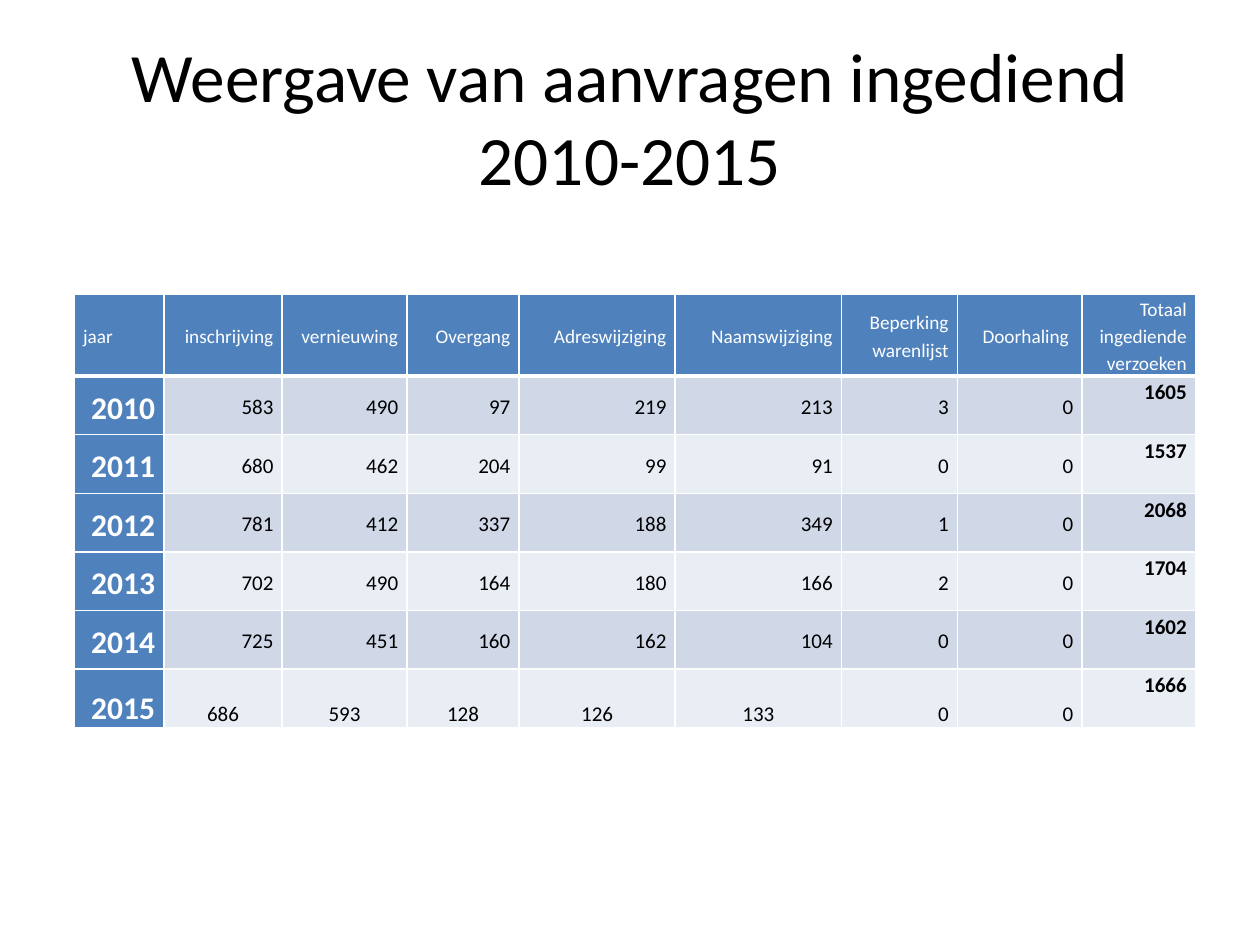
from lxml.etree import SubElement
from pptx import Presentation
from pptx.dml.color import RGBColor
from pptx.enum.text import MSO_ANCHOR as Anchor, PP_ALIGN as Align
from pptx.oxml.ns import qn
from pptx.util import Inches, Pt

HEADERS = ["jaar", "inschrijving", "vernieuwing", "Overgang", "Adreswijziging",
           "Naamswijziging", "Beperking warenlijst", "Doorhaling ",
           "Totaal ingediende verzoeken"]
REQUESTS = [
    [2010, 583, 490, 97, 219, 213, 3, 0, 1605],
    [2011, 680, 462, 204, 99, 91, 0, 0, 1537],
    [2012, 781, 412, 337, 188, 349, 1, 0, 2068],
    [2013, 702, 490, 164, 180, 166, 2, 0, 1704],
    [2014, 725, 451, 160, 162, 104, 0, 0, 1602],
    [2015, 686, 593, 128, 126, 133, 0, 0, 1666],
]
COLUMN_SHARES = [7.1, 9.4, 9.9, 8.9, 12.4, 13.2, 9.2, 9.9, 9]
ROW_SHARES = [8.7] + [6.2] * len(REQUESTS)


def color(value):
    """Turn a hex string into a colour."""
    return RGBColor.from_string(value)


class Deck:
    """Holds the style and the current slide; lengths are percentages of the slide."""

    font = "Calibri"
    white, black, blue = "FFFFFF", "000000", "4F81BD"
    bands = ("D0D8E8", "E9EDF4")

    def __init__(self, width, height):
        """Start a one-slide presentation of the given size in inches."""
        self.prs = Presentation()
        self.prs.slide_width, self.prs.slide_height = Inches(width), Inches(height)
        self.s = self.prs.slides.add_slide(self.prs.slide_layouts[6])

    def x(self, share):
        """Convert a share of the slide width."""
        return round(self.prs.slide_width * share / 100)

    def y(self, share):
        """Convert a share of the slide height."""
        return round(self.prs.slide_height * share / 100)

    def text(self, tf, text, size, ink, align, bold=False):
        """Fill the first paragraph of a text frame and return it."""
        tf.word_wrap = True
        p = tf.paragraphs[0]
        p.text, p.alignment = str(text), align
        p.font.name, p.font.size, p.font.bold = self.font, Pt(size), bold
        p.font.color.rgb = color(ink)
        return p

    def title(self, text, left, top, width, height):
        """Add a centred heading."""
        box = self.s.shapes.add_textbox(self.x(left), self.y(top), self.x(width), self.y(height))
        box.text_frame.vertical_anchor = Anchor.MIDDLE
        self.text(box.text_frame, text, 39.6, self.black, Align.CENTER)

    def border(self, cell, side, points):
        """Draw one white edge of a cell."""
        ln = SubElement(cell._tc.get_or_add_tcPr(), qn(f"a:ln{side}"), w=str(Pt(points)))
        fill = SubElement(ln, qn("a:solidFill"))
        SubElement(fill, qn("a:srgbClr"), val=self.white)

    def cell(self, cell, text, fill, size, ink, align, anchor, bold, bottom):
        """Style and fill one table cell."""
        for side, points in zip("LRTB", (1, 1, 1, bottom)):
            self.border(cell, side, points)
        cell.fill.solid()
        cell.fill.fore_color.rgb = color(fill)
        cell.margin_left = cell.margin_right = Inches(0.07)
        cell.margin_top = cell.margin_bottom = 0
        cell.vertical_anchor = anchor
        self.text(cell.text_frame, text, size, ink, align, bold).line_spacing = 1.15

    def table(self, left, top, columns, rows, headers, records):
        """Add a table with a header row, a year column and a total column."""
        t = self.s.shapes.add_table(len(rows), len(columns), self.x(left), self.y(top),
                                    self.x(sum(columns)), self.y(sum(rows))).table
        for col, share in zip(t.columns, columns):
            col.width = self.x(share)
        for row, share in zip(t.rows, rows):
            row.height = self.y(share)
        for c, text in enumerate(headers):
            self.cell(t.cell(0, c), text, self.blue, 11, self.white,
                      Align.RIGHT if c else Align.LEFT, Anchor.MIDDLE, False, 3)
        total = len(columns) - 1
        for r, record in enumerate(records, 1):
            last = r == len(records)
            for c, value in enumerate(record):
                fill, size, ink = self.bands[(r - 1) % 2], 12, self.black
                if c == 0:
                    fill, size, ink = self.blue, 18, self.white
                align = Align.CENTER if last and 1 <= c <= 5 else Align.RIGHT
                anchor = Anchor.BOTTOM if last else Anchor.MIDDLE
                if c == total:
                    anchor = Anchor.TOP
                self.cell(t.cell(r, c), value, fill, size, ink, align, anchor,
                          c in (0, total), 1)


def main():
    """Build and save the slide."""
    deck = Deck(10, 7.5)
    deck.title("Weergave van aanvragen ingediend 2010-2015", 5, 4, 90, 16.67)
    deck.table(5.9, 31.1, COLUMN_SHARES, ROW_SHARES, HEADERS, REQUESTS)
    deck.prs.save("out.pptx")


if __name__ == "__main__":
    main()
